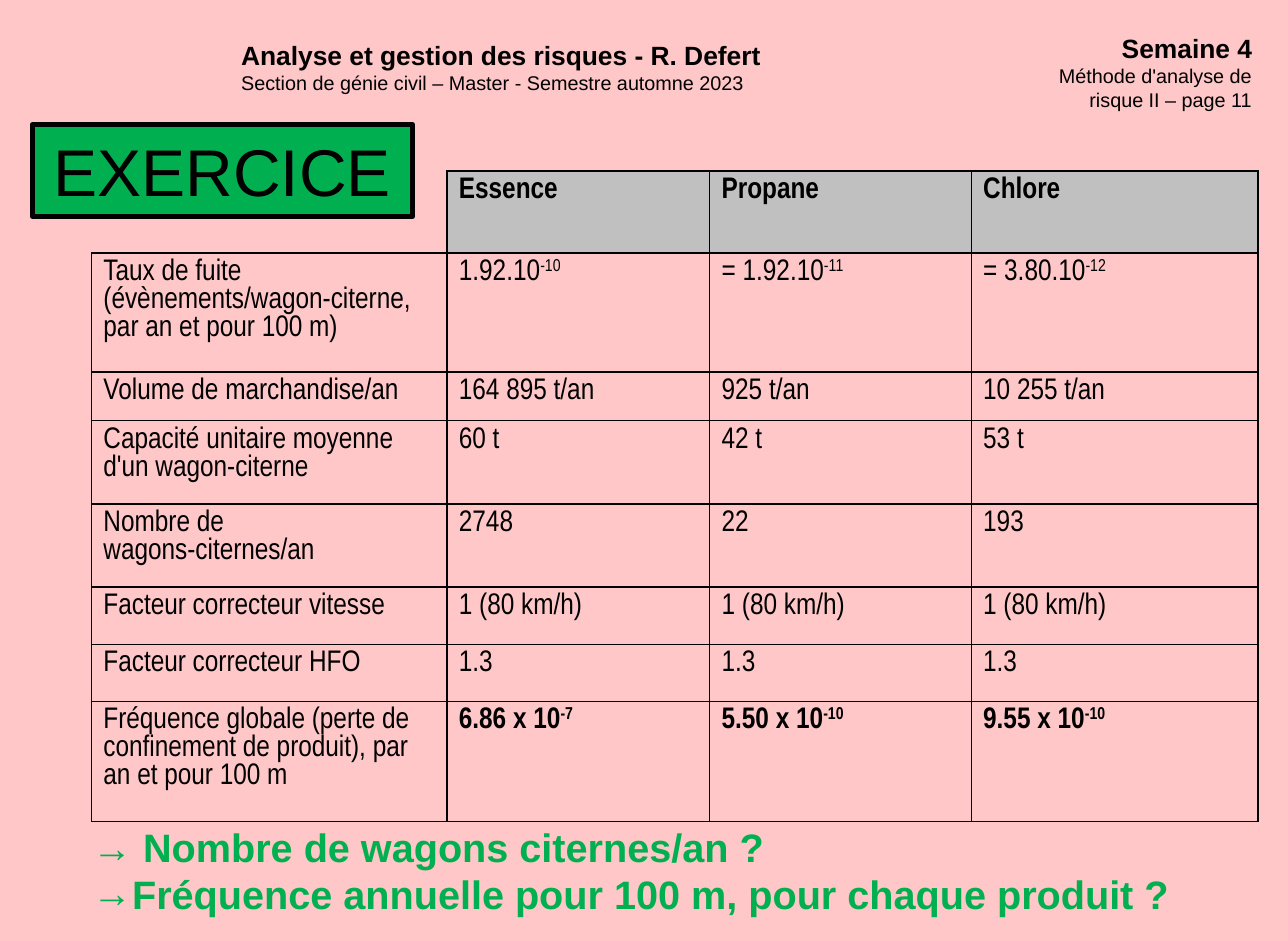
"""Build the exercise slide on leak frequencies of tank wagons."""
from dataclasses import dataclass

import pptx
import pptx.dml.color
import pptx.enum.lang
import pptx.enum.shapes
import pptx.enum.text
import pptx.oxml
import pptx.oxml.ns
import pptx.util

Inches, Pt = pptx.util.Inches, pptx.util.Pt
RGBColor = pptx.dml.color.RGBColor
ALIGN = pptx.enum.text.PP_ALIGN

PINK = RGBColor(0xFF, 0xC7, 0xC7)
BLACK = RGBColor(0x00, 0x00, 0x00)
GREY = RGBColor(0xC0, 0xC0, 0xC0)
GREEN = RGBColor(0x00, 0xB0, 0x50)
NS = pptx.oxml.ns.nsdecls("a")


@dataclass(frozen=True)
class Line:
    text: str
    size: float
    bold: bool = False
    color: RGBColor = BLACK
    bullet: str = ""


@dataclass(frozen=True)
class Box:
    left: float
    top: float
    width: float
    height: float
    lines: tuple[Line, ...]
    align: ALIGN = ALIGN.LEFT
    anchor: pptx.enum.text.MSO_ANCHOR = pptx.enum.text.MSO_ANCHOR.TOP


@dataclass(frozen=True)
class Row:
    height: float
    cells: tuple[str, ...]
    bold: bool = False


BOXES = (
    Box(1.93, 0.28, 5.9, 0.57, (
        Line("Analyse et gestion des risques - R. Defert", 16, True),
        Line("Section de génie civil – Master - Semestre automne 2023", 12))),
    Box(8.47, 0.22, 2.16, 0.77, (
        Line("Semaine 4", 16, True),
        Line("Méthode d'analyse de risque II – page 11", 12)), ALIGN.RIGHT),
    Box(0.68, 6.56, 9.43, 1.21, (
        Line("→ Nombre de wagons citernes/an ?", 24, True, GREEN),
        Line("Fréquence annuelle pour 100 m, pour chaque produit ?", 24, True, GREEN, "→")),
        anchor=pptx.enum.text.MSO_ANCHOR.BOTTOM),
)
EXERCISE = Box(0.27, 1.05, 3.2, 0.77, (Line("EXERCICE", 40),), ALIGN.CENTER,
               pptx.enum.text.MSO_ANCHOR.MIDDLE)

COLUMNS = (2.99, 2.21, 2.2, 2.41)
ROWS = (
    Row(0.69, ("", "Essence", "Propane", "Chlore"), True),
    Row(1.0, ("Taux de fuite (évènements/wagon-citerne, par an et pour 100 m)",
              "1.92.10^-10", "= 1.92.10^-11", "= 3.80.10^-12")),
    Row(0.41, ("Volume de marchandise/an", "164 895 t/an", "925 t/an", "10 255 t/an")),
    Row(0.7, ("Capacité unitaire moyenne d'un wagon-citerne", "60 t", "42 t", "53 t")),
    Row(0.7, ("Nombre de wagons-citernes/an", "2748", "22", "193")),
    Row(0.48, ("Facteur correcteur vitesse",) + ("1 (80 km/h)",) * 3),
    Row(0.48, ("Facteur correcteur HFO",) + ("1.3",) * 3),
    Row(1.01, ("Fréquence globale (perte de confinement de produit), par an et pour 100 m",
               "6.86 x 10^-7", "5.50 x 10^-10", "9.55 x 10^-10"), True),
)


def add_run(p, text: str, size: float, bold: bool, color: RGBColor, name: str = "Arial"):
    r = p.add_run()
    r.text = text
    r.font.name, r.font.size, r.font.bold = name, Pt(size), bold
    r.font.color.rgb = color
    r.font.language_id = pptx.enum.lang.MSO_LANGUAGE_ID.FRENCH
    return r


def fill_text(tf, box: Box) -> None:
    tf.word_wrap = True
    tf.vertical_anchor = box.anchor
    for i, line in enumerate(box.lines):
        p = tf.paragraphs[0] if i == 0 else tf.add_paragraph()
        p.alignment = box.align
        if line.bullet:
            pPr = p._p.get_or_add_pPr()
            pPr.set("marL", str(Inches(0.31)))
            pPr.set("indent", str(-Inches(0.31)))
            pPr.append(pptx.oxml.parse_xml(f'<a:buFont {NS} typeface="Arial"/>'))
            pPr.append(pptx.oxml.parse_xml(f'<a:buChar {NS} char="{line.bullet}"/>'))
        add_run(p, line.text, line.size, line.bold, line.color)


def place(box: Box) -> tuple[int, ...]:
    return tuple(Inches(v) for v in (box.left, box.top, box.width, box.height))


def set_borders(cell, hidden: str) -> None:
    tcPr = cell._tc.get_or_add_tcPr()
    for side in "LRTB":
        paint = "<a:noFill/>" if side in hidden else (
            f'<a:solidFill><a:srgbClr val="{BLACK}"/></a:solidFill>')
        tcPr.append(pptx.oxml.parse_xml(
            f'<a:ln{side} {NS} w="{Pt(1)}">{paint}</a:ln{side}>'))


def fill_cell(cell, text: str, bold: bool) -> None:
    p = cell.text_frame.paragraphs[0]
    base, _, power = text.partition("^")
    if base:
        add_run(p, base, 18, bold, BLACK, "Arial Narrow")
    if power:
        r = add_run(p, power, 18, bold, BLACK, "Arial Narrow")
        r._r.get_or_add_rPr().set("baseline", "30000")


def add_risk_table(s) -> None:
    frame = s.shapes.add_table(len(ROWS), len(COLUMNS), Inches(0.77), Inches(1.44),
                               Inches(sum(COLUMNS)), Inches(sum(r.height for r in ROWS)))
    table = frame.table
    table.first_row = table.horz_banding = False
    for column, width in zip(table.columns, COLUMNS):
        column.width = Inches(width)
    for i, row in enumerate(ROWS):
        table.rows[i].height = Inches(row.height)
        for j, text in enumerate(row.cells):
            cell = table.cell(i, j)
            set_borders(cell, "LT" if i == j == 0 else "")
            if i == 0 and j > 0:
                cell.fill.solid()
                cell.fill.fore_color.rgb = GREY
            else:
                cell.fill.background()
            fill_cell(cell, text, row.bold and j > 0)


def add_exercise(s) -> None:
    sp = s.shapes.add_shape(pptx.enum.shapes.MSO_SHAPE.RECTANGLE, *place(EXERCISE))
    sp.shadow.inherit = False
    sp.fill.solid()
    sp.fill.fore_color.rgb = GREEN
    sp.line.color.rgb = BLACK
    sp.line.width = Pt(3)
    fill_text(sp.text_frame, EXERCISE)


def main() -> None:
    prs = pptx.Presentation()
    prs.slide_width, prs.slide_height = Pt(780), Pt(570)
    s = prs.slides.add_slide(prs.slide_layouts[6])
    s.background.fill.solid()
    s.background.fill.fore_color.rgb = PINK
    add_risk_table(s)
    add_exercise(s)
    for box in BOXES:
        fill_text(s.shapes.add_textbox(*place(box)).text_frame, box)
    prs.save("out.pptx")


if __name__ == "__main__":
    main()
